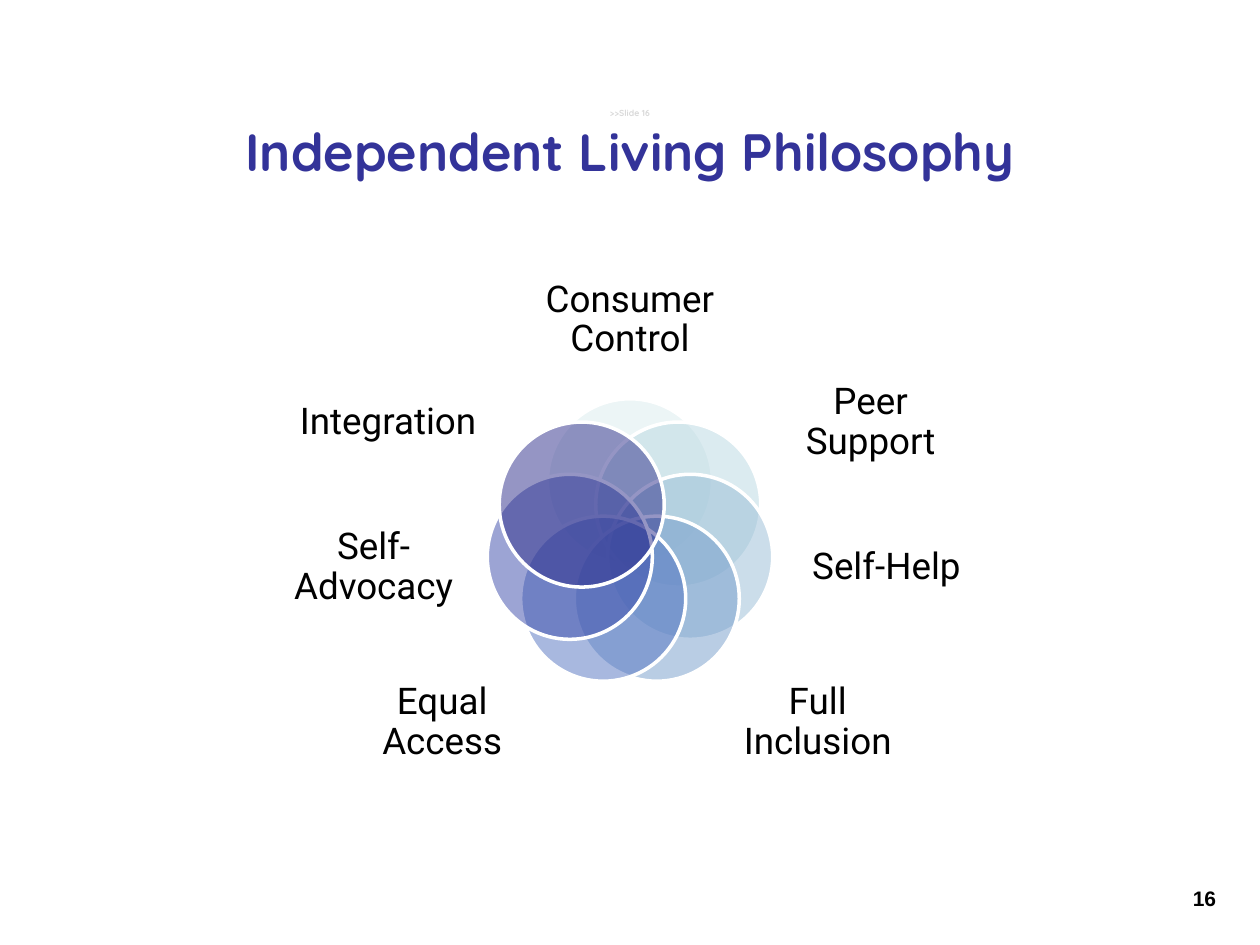
from math import cos, pi, sin

from lxml.etree import SubElement
from pptx import Presentation
from pptx.dml.color import RGBColor
from pptx.enum.shapes import MSO_SHAPE
from pptx.enum.text import MSO_ANCHOR, PP_ALIGN
from pptx.oxml.ns import qn
from pptx.util import Inches, Pt

PRINCIPLES = [
    ("Consumer Control", "DAEDEF", (4.25, 2.14, 1.5, 0.8)),
    ("Peer Support", "B9D8E2", (6.2, 2.91, 1.42, 0.89)),
    ("Self-Help", "98BDD6", (6.34, 4.03, 1.39, 0.95)),
    ("Full Inclusion", "759CCB", (5.74, 5.3, 1.5, 0.87)),
    ("Equal Access", "5273C1", (2.76, 5.3, 1.5, 0.87)),
    ("Self-Advocacy", "3A4BAA", (2.27, 4.03, 1.39, 0.95)),
    ("Integration", "2D2D8A", (2.37, 2.91, 1.42, 0.89)),
]
CENTER_X, CENTER_Y = 5, 4.31
RING_RADIUS = 0.49
DIAMETER = 1.31


def rgb(color):
    return RGBColor.from_string(color)


def add_run(p, text, font, size, color, bold=False):
    r = p.add_run()
    r.text = text
    r.font.name = font
    r.font.size = Pt(size)
    r.font.bold = bold
    r.font.color.rgb = rgb(color)


def set_title(s):
    sp = s.shapes.title
    sp.left, sp.top = Inches(1.1), Inches(0.8)
    sp.width, sp.height = Inches(7.8), Inches(0.7)
    tf = sp.text_frame
    tf.word_wrap = True
    tf.vertical_anchor = MSO_ANCHOR.MIDDLE
    p = tf.paragraphs[0]
    p.alignment = PP_ALIGN.CENTER
    add_run(p, ">>Slide 16", "Quicksand", 5, "D9D9D9", True)
    p.add_line_break()
    SubElement(p._p.find(qn("a:br")), qn("a:rPr"), sz="500")
    add_run(p, "Independent Living Philosophy", "Quicksand", 30, "333399", True)


def add_circle(shapes, x, y, color):
    sp = shapes.add_shape(
        MSO_SHAPE.OVAL, Inches(x - DIAMETER / 2), Inches(y - DIAMETER / 2),
        Inches(DIAMETER), Inches(DIAMETER))
    sp.shadow.inherit = False
    sp.fill.solid()
    sp.fill.fore_color.rgb = rgb(color)
    fill = sp._element.spPr.find(qn("a:solidFill"))
    SubElement(fill[0], qn("a:alpha"), val="50000")
    sp.line.color.rgb = rgb("FFFFFF")
    sp.line.width = Pt(2)


def add_text(shapes, box, align):
    tf = shapes.add_textbox(*[Inches(v) for v in box]).text_frame
    tf.word_wrap = True
    p = tf.paragraphs[0]
    p.alignment = align
    return tf, p


def add_label(shapes, text, box):
    tf, p = add_text(shapes, box, PP_ALIGN.CENTER)
    tf.margin_left = tf.margin_right = tf.margin_top = tf.margin_bottom = 0
    tf.vertical_anchor = MSO_ANCHOR.MIDDLE
    p.line_spacing = 0.9
    add_run(p, text, "Roboto", 21, "000000")


def add_venn(s):
    shapes = s.shapes.add_group_shape().shapes
    for i, (text, color, box) in enumerate(PRINCIPLES):
        angle = 2 * pi * i / len(PRINCIPLES)
        x = CENTER_X + RING_RADIUS * sin(angle)
        y = CENTER_Y - RING_RADIUS * cos(angle)
        add_circle(shapes, x, y, color)
        add_label(shapes, text, box)


def add_page_number(s):
    tf, p = add_text(s.shapes, (7.17, 6.98, 2.58, 0.27), PP_ALIGN.RIGHT)
    add_run(p, "16", "Arial", 12, "000000", True)


def main():
    prs = Presentation()
    prs.slide_width, prs.slide_height = Inches(10), Inches(7.5)
    s = prs.slides.add_slide(prs.slide_layouts[5])
    set_title(s)
    add_venn(s)
    add_page_number(s)
    prs.save("out.pptx")


if __name__ == "__main__":
    main()
